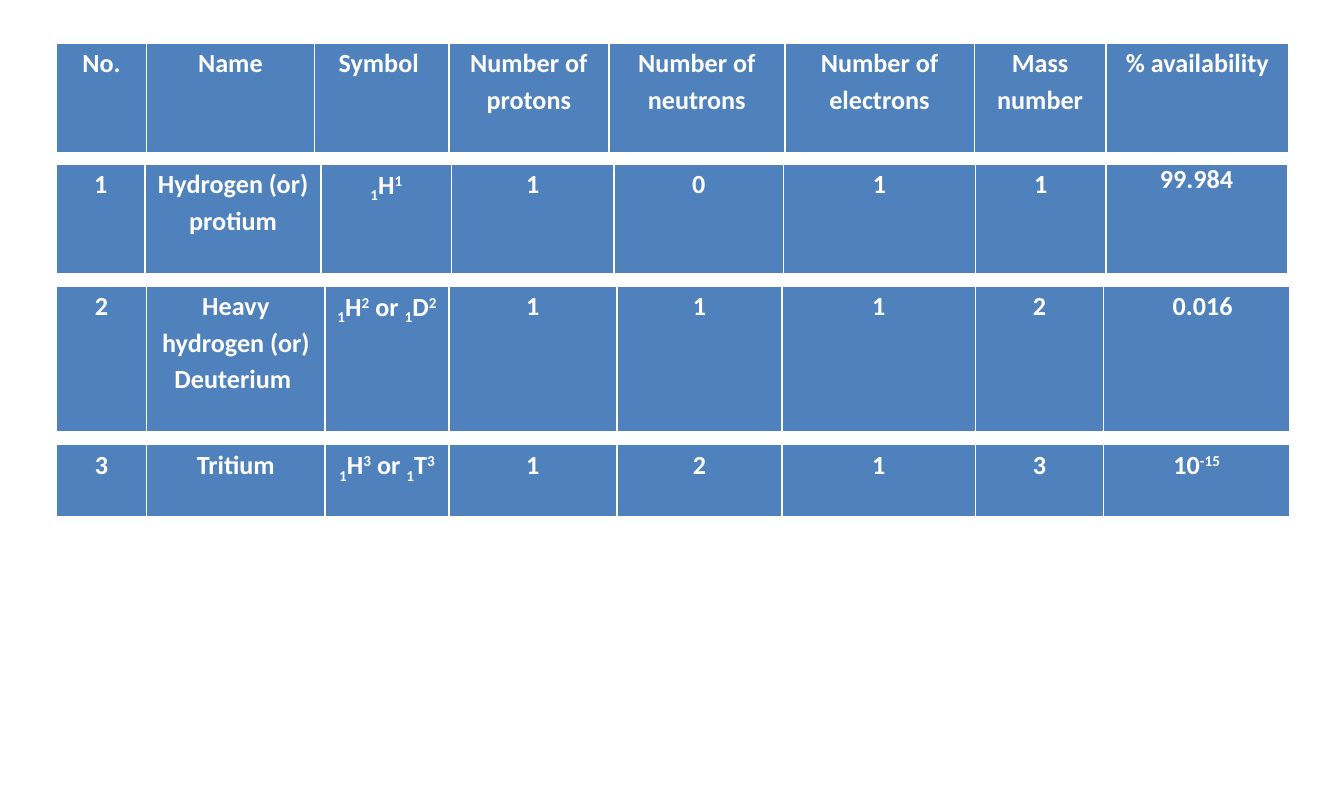
from lxml.etree import SubElement
from pptx import Presentation
from pptx.dml.color import RGBColor
from pptx.enum.text import PP_ALIGN
from pptx.oxml.ns import qn
from pptx.util import Inches, Pt


def color(value):
    return RGBColor.from_string(value)


class IsotopeSlide:
    font = "Calibri"
    size = 14
    text_color = "FFFFFF"
    fill_color = "4F81BD"
    border_color = "FFFFFF"
    border_widths = {"lnL": 1, "lnR": 1, "lnT": 1, "lnB": 3}
    baselines = {"_": "-25000", "^": "30000"}

    def __init__(self, page):
        self.page = page

    def add_row_table(self, top, height, widths, texts):
        frame = self.page.shapes.add_table(
            1, len(widths), Inches(0.42), Inches(top), Inches(sum(widths)), Inches(height)
        )
        table = frame.table
        table.first_row = False
        table.horz_banding = False
        table.rows[0].height = Inches(height)
        for column, width in zip(table.columns, widths):
            column.width = Inches(width)
        for cell, text in zip(table.rows[0].cells, texts):
            self.style_cell(cell)
            self.add_text(cell.text_frame.paragraphs[0], text)
        return table

    def style_cell(self, cell):
        cell.margin_left = cell.margin_right = Inches(0.07)
        cell.margin_top = cell.margin_bottom = 0
        self.add_borders(cell)
        cell.fill.solid()
        cell.fill.fore_color.rgb = color(self.fill_color)

    def add_borders(self, cell):
        properties = cell._tc.get_or_add_tcPr()
        for side, width in self.border_widths.items():
            line = SubElement(properties, qn(f"a:{side}"), w=str(Pt(width)))
            fill = SubElement(line, qn("a:solidFill"))
            SubElement(fill, qn("a:srgbClr"), val=self.border_color)

    def add_text(self, para, text):
        para.alignment = PP_ALIGN.CENTER
        para.line_spacing = 1.15
        for part in text.split("|"):
            baseline = self.baselines.get(part[0])
            span = para.add_run()
            span.text = part[1:] if baseline else part
            span.font.name = self.font
            span.font.size = Pt(self.size)
            span.font.bold = True
            span.font.color.rgb = color(self.text_color)
            if baseline:
                span.font._element.set("baseline", baseline)


def main():
    deck = Presentation()
    deck.slide_width = Inches(10)
    deck.slide_height = Inches(6)
    slide = IsotopeSlide(deck.slides.add_slide(deck.slide_layouts[6]))

    header_widths = [0.67, 1.25, 1, 1.19, 1.31, 1.41, 0.98, 1.36]
    protium_widths = [0.66, 1.31, 0.97, 1.21, 1.26, 1.43, 0.97, 1.35]
    heavy_widths = [0.67, 1.33, 0.92, 1.25, 1.23, 1.44, 0.95, 1.39]

    slide.add_row_table(0.32, 0.83, header_widths, [
        "No.", "Name", "Symbol ", "Number of protons", "Number of neutrons",
        "Number of electrons", "Mass number", "% availability",
    ])
    protium = slide.add_row_table(1.22, 0.83, protium_widths, [
        "1", "Hydrogen (or) protium", "_1|H|^1", "1", "0", "1", "1", "99.984",
    ])
    deuterium = slide.add_row_table(2.13, 1.1, heavy_widths, [
        "2", "Heavy hydrogen (or) Deuterium ", "_1|H|^2| or |_1|D|^2",
        "1", "1", "1", "2", "0.016",
    ])
    slide.add_row_table(3.31, 0.55, heavy_widths, [
        "3", "Tritium", "_1|H|^3| or |_1|T|^3", "1", "2", "1", "3", "10|^-15",
    ])
    protium.cell(0, 7).text_frame.paragraphs[0].line_spacing = 1.0
    deuterium.cell(0, 7).margin_left = Inches(0.16)

    deck.save("out.pptx")


if __name__ == "__main__":
    main()
